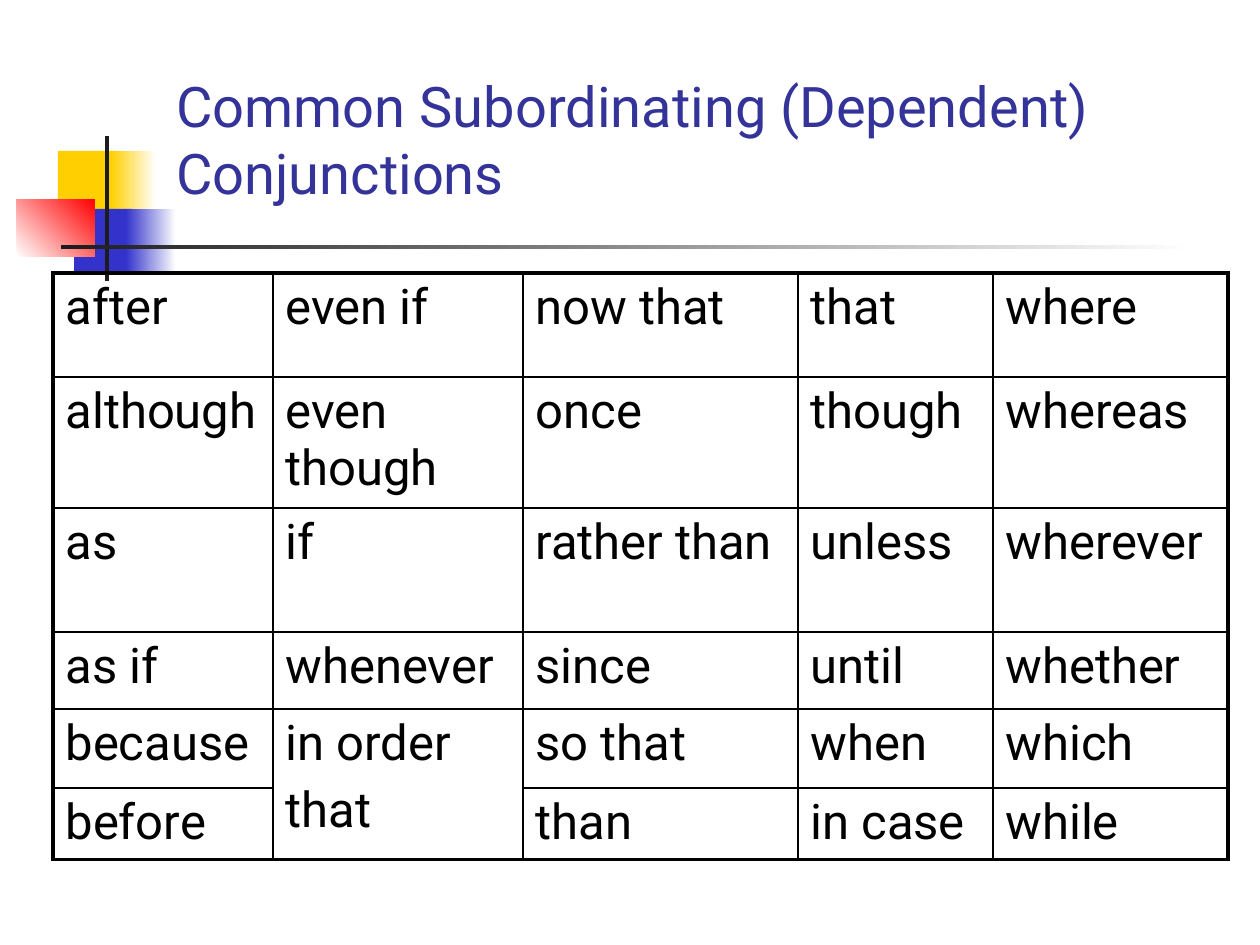
from lxml.etree import SubElement
from pptx import Presentation
from pptx.dml.color import RGBColor
from pptx.enum.shapes import MSO_SHAPE
from pptx.enum.text import MSO_ANCHOR
from pptx.oxml.ns import qn
from pptx.util import Emu, Pt

FONT = "Roboto"
COLORS = {
    "yellow": "FFCF01",
    "blue": "3333CC",
    "red": "FF0000",
    "charcoal": "1C1C1C",
    "white": "FFFFFF",
    "title": "333399",
    "black": "000000",
}
COLUMN_WIDTHS = [220, 250, 275, 195, 235]
ROW_HEIGHTS = [104, 131, 124, 77, 79, 71]
CONJUNCTIONS = [
    ["after", "even if", "now that", "that", "where"],
    ["although", "even though", "once", "though", "whereas"],
    ["as", "if", "rather than", "unless", "wherever"],
    ["as if", "whenever", "since", "until", "whether"],
    ["because", "in order\nthat", "so that", "when", "which"],
    ["before", "", "than", "in case", "while"],
]
THIN, THICK = 1, 2.25


def px(count):
    return Emu(round(count * 914400 / 126))


def rgb(name):
    return RGBColor.from_string(COLORS[name])


def style(paragraph, size, color):
    paragraph.font.name = FONT
    paragraph.font.size = Pt(size)
    paragraph.font.color.rgb = rgb(color)


def add_block(slide, box, start, end=None, angle=0):
    """Add a plain rectangle, or one fading from start to end."""
    block = slide.shapes.add_shape(MSO_SHAPE.RECTANGLE, *map(px, box))
    block.shadow.inherit = False
    block.line.fill.background()
    if end is None:
        block.fill.solid()
        block.fill.fore_color.rgb = rgb(start)
        return
    block.fill.gradient()
    block.fill.gradient_angle = angle
    for stop, color in zip(block.fill.gradient_stops, (start, end)):
        stop.color.rgb = rgb(color)


def add_ornament(slide):
    add_block(slide, (58, 151, 60, 66), "yellow")
    add_block(slide, (111, 151, 45, 66), "yellow", "white")
    add_block(slide, (74, 209, 58, 66), "blue")
    add_block(slide, (126, 209, 50, 66), "blue", "white")
    add_block(slide, (17, 199, 78, 58), "white", "red", angle=45)
    add_block(slide, (105, 136, 4, 145), "charcoal")
    add_block(slide, (61, 245, 1134, 4), "charcoal", "white")


def add_title(slide, text):
    frame = slide.shapes.add_textbox(*map(px, (164, 71, 1045, 141))).text_frame
    frame.word_wrap = True
    frame.vertical_anchor = MSO_ANCHOR.BOTTOM
    frame.text = text
    style(frame.paragraphs[0], 32, "title")


def set_borders(cell, widths):
    """Draw the left, right, top and bottom borders, widths in points."""
    properties = cell._tc.get_or_add_tcPr()
    for side, width in zip("LRTB", widths):
        line = SubElement(properties, qn(f"a:ln{side}"), w=str(Pt(width)))
        fill = SubElement(line, qn("a:solidFill"))
        SubElement(fill, qn("a:srgbClr"), val=COLORS["black"])


def fill_cell(cell, text):
    cell.fill.background()
    cell.text = text
    for paragraph in cell.text_frame.paragraphs:
        style(paragraph, 28, "black")
        paragraph.space_before = Pt(5.6)


def add_conjunction_table(slide):
    last_row, last_column = len(ROW_HEIGHTS) - 1, len(COLUMN_WIDTHS) - 1
    box = (53, 273, sum(COLUMN_WIDTHS), sum(ROW_HEIGHTS))
    table = slide.shapes.add_table(
        len(ROW_HEIGHTS), len(COLUMN_WIDTHS), *map(px, box)
    ).table
    table.first_row = table.horz_banding = False
    for column, width in zip(table.columns, COLUMN_WIDTHS):
        column.width = px(width)
    for row, height in zip(table.rows, ROW_HEIGHTS):
        row.height = px(height)
    table.cell(4, 1).merge(table.cell(5, 1))

    for r, words in enumerate(CONJUNCTIONS):
        for c, word in enumerate(words):
            cell = table.cell(r, c)
            bottom = r + cell.span_height - 1 if cell.is_merge_origin else r
            outer = (c == 0, c == last_column, r == 0, bottom == last_row)
            set_borders(cell, [THICK if edge else THIN for edge in outer])
            fill_cell(cell, word)


def main():
    deck = Presentation()
    deck.slide_width, deck.slide_height = px(1260), px(945)
    slide = deck.slides.add_slide(deck.slide_layouts[6])
    add_ornament(slide)
    add_title(slide, "Common Subordinating (Dependent) Conjunctions")
    add_conjunction_table(slide)
    deck.save("out.pptx")


if __name__ == "__main__":
    main()
